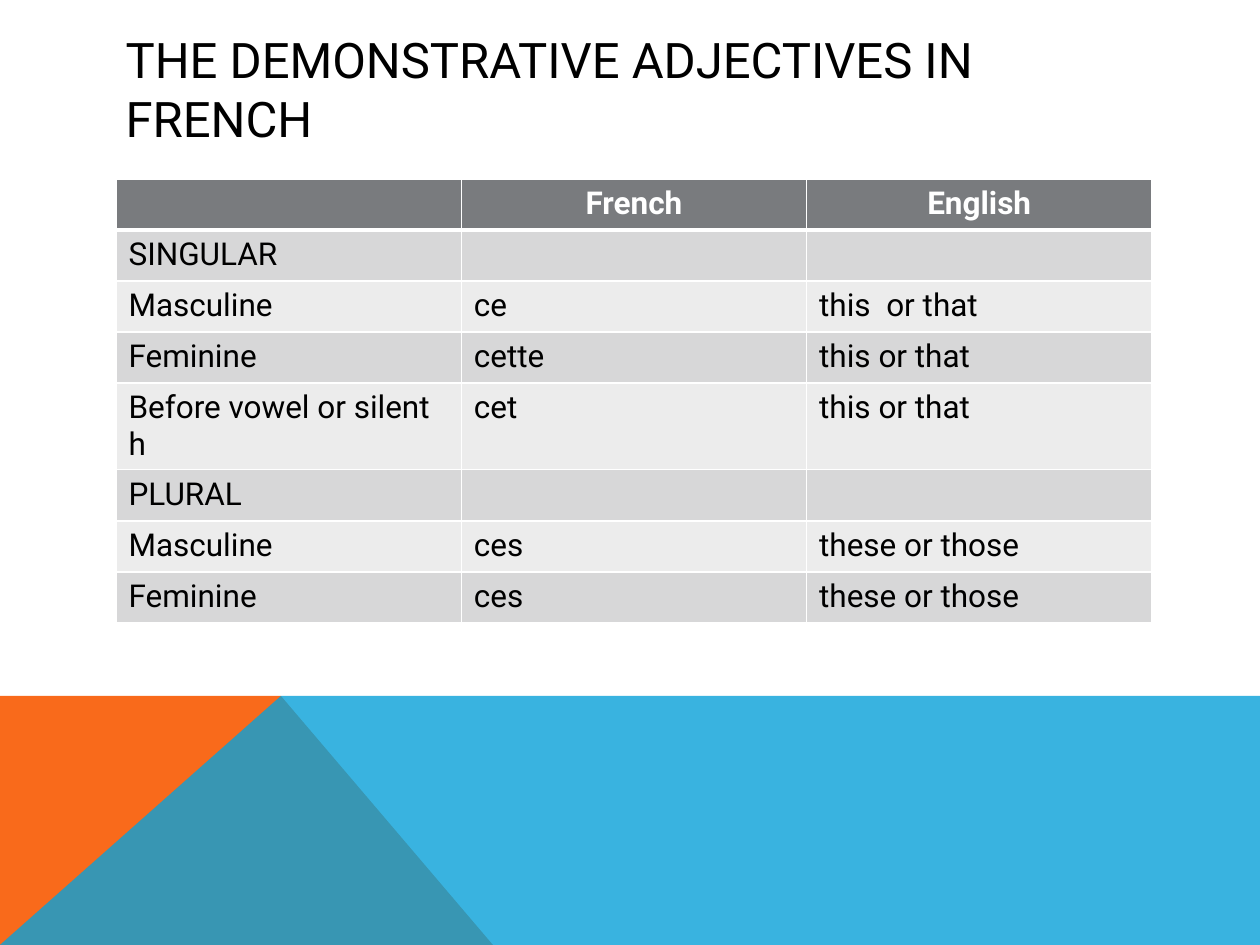
from lxml.etree import SubElement
from pptx import Presentation
from pptx.dml.color import RGBColor
from pptx.enum.text import MSO_ANCHOR, PP_ALIGN
from pptx.oxml.ns import qn
from pptx.util import Pt

EMU_PER_PX = 914400 / 126
SLIDE_W, SLIDE_H = 1260, 945
BAND_TOP, PEAK_X = 696, 281
FONT = "Roboto"
COLORS = {
    "orange": "F96A1B",
    "blue": "08A1D9",
    "header": "797B7E",
    "dark_row": "D7D7D8",
    "light_row": "ECECEC",
    "white": "FFFFFF",
    "black": "000000",
}
ROWS = [
    ("", "French", "English"),
    ("SINGULAR", "", ""),
    ("Masculine", "ce", "this  or that"),
    ("Feminine", "cette", "this or that"),
    ("Before vowel or silent h", "cet", "this or that"),
    ("PLURAL", "", ""),
    ("Masculine", "ces", "these or those"),
    ("Feminine", "ces", "these or those"),
]
TITLE_FORMAT = {"name": FONT, "size": Pt(28), "bold": False}
HEADER_FORMAT = {"name": FONT, "size": Pt(18), "bold": True}
BODY_FORMAT = {"name": FONT, "size": Pt(18), "bold": False}


def px(length):
    return round(length * EMU_PER_PX)


def rgb(name):
    return RGBColor.from_string(COLORS[name])


def format_font(font, values, color):
    for attribute, value in values.items():
        setattr(font, attribute, value)
    font.color.rgb = rgb(color)


def add_panel(slide, points, color, opacity=100):
    builder = slide.shapes.build_freeform(*points[0], scale=EMU_PER_PX)
    builder.add_line_segments(points[1:], close=True)
    panel = builder.convert_to_shape()
    panel.shadow.inherit = False
    panel.line.fill.background()
    panel.fill.solid()
    panel.fill.fore_color.rgb = rgb(color)
    if opacity < 100:
        solid = panel.fill._xPr.find(qn("a:solidFill"))
        SubElement(solid[0], qn("a:alpha"), val=str(opacity * 1000))


def set_title(slide, text):
    title = slide.shapes.title
    title.left, title.top, title.width, title.height = map(px, (113, 50, 1036, 76))
    frame = title.text_frame
    frame.word_wrap = True
    frame.vertical_anchor = MSO_ANCHOR.MIDDLE
    frame.text = text
    heading = frame.paragraphs[0]
    heading.alignment = PP_ALIGN.LEFT
    format_font(heading.font, TITLE_FORMAT, "black")


def set_borders(cell, widths):
    properties = cell._tc.get_or_add_tcPr()
    for side, width in widths.items():
        border = SubElement(properties, qn(f"a:ln{side}"), w=str(Pt(width)))
        solid = SubElement(border, qn("a:solidFill"))
        SubElement(solid, qn("a:srgbClr"), val=COLORS["white"])


def fill_cell(cell, text, row):
    is_header = row == 0
    # The rule below the header is thicker than the others
    set_borders(cell, {"L": 1, "R": 1, "T": 3 if row == 1 else 1, "B": 3 if is_header else 1})
    cell.fill.solid()
    fill = "header" if is_header else "dark_row" if row % 2 else "light_row"
    cell.fill.fore_color.rgb = rgb(fill)
    cell.text = text
    entry = cell.text_frame.paragraphs[0]
    entry.alignment = PP_ALIGN.CENTER if is_header else PP_ALIGN.LEFT
    for run in entry.runs:
        if is_header:
            format_font(run.font, HEADER_FORMAT, "white")
        else:
            format_font(run.font, BODY_FORMAT, "black")


def add_adjective_table(slide):
    frame = slide.shapes.add_table(
        len(ROWS), len(ROWS[0]), px(116), px(179), px(1036), px(408))
    for row, texts in enumerate(ROWS):
        for column, text in enumerate(texts):
            fill_cell(frame.table.cell(row, column), text, row)


def main():
    deck = Presentation()
    deck.slide_width, deck.slide_height = px(SLIDE_W), px(SLIDE_H)
    slide = deck.slides.add_slide(deck.slide_layouts[5])

    # Coloured band along the bottom
    add_panel(slide, [(0, SLIDE_H), (0, BAND_TOP), (PEAK_X, BAND_TOP), (493, SLIDE_H)], "orange")
    add_panel(slide, [(0, SLIDE_H), (PEAK_X, BAND_TOP), (SLIDE_W, BAND_TOP), (SLIDE_W, SLIDE_H)],
              "blue", opacity=80)

    # Title and table
    set_title(slide, "THE DEMONSTRATIVE ADJECTIVES IN FRENCH")
    add_adjective_table(slide)

    deck.save("out.pptx")


if __name__ == "__main__":
    main()
